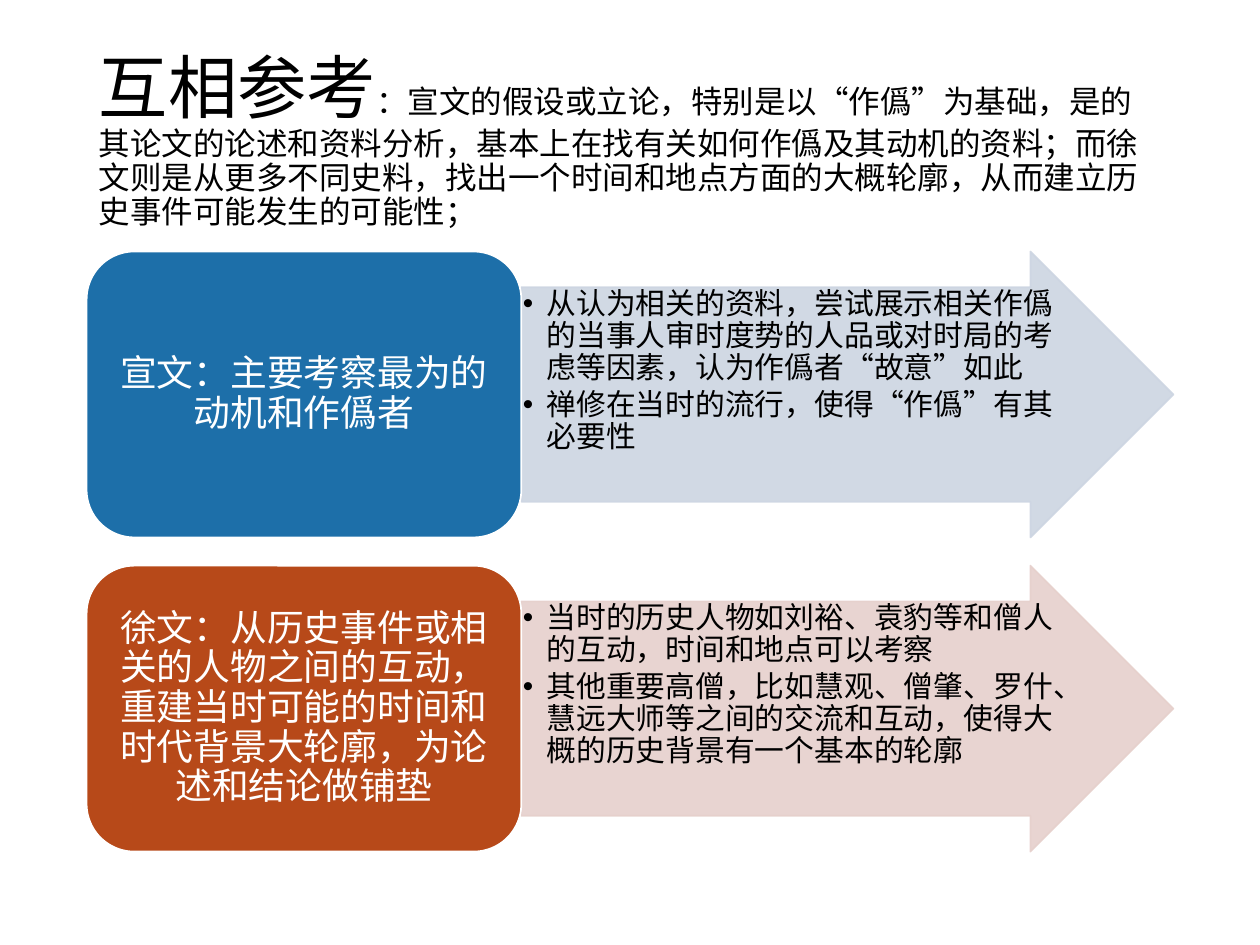
from lxml.etree import SubElement
from pptx import Presentation
from pptx.dml.color import RGBColor
from pptx.enum.lang import MSO_LANGUAGE_ID
from pptx.enum.shapes import MSO_SHAPE
from pptx.enum.text import MSO_ANCHOR, PP_ALIGN
from pptx.oxml.ns import qn
from pptx.util import Pt

HEADING = [
    ("互相参考", 39.6),
    ("：宣文的假设或立论，特别是以“作僞”为基础，是的其论文的论述和资料分析，"
     "基本上在找有关如何作僞及其动机的资料；而徐文则是从更多不同史料，"
     "找出一个时间和地点方面的大概轮廓，从而建立历史事件可能发生的可能性；", 18),
]
VIEWS = [
    {
        "thesis": "宣文：主要考察最为的动机和作僞者",
        "points": [
            "从认为相关的资料，尝试展示相关作僞的当事人审时度势的人品或对时局的考虑等因素，认为作僞者“故意”如此",
            "禅修在当时的流行，使得“作僞”有其必要性",
        ],
        "colours": ("blue", "pale blue"),
    },
    {
        "thesis": "徐文：从历史事件或相关的人物之间的互动，重建当时可能的时间和时代背景大轮廓，为论述和结论做铺垫",
        "points": [
            "当时的历史人物如刘裕、袁豹等和僧人的互动，时间和地点可以考察",
            "其他重要高僧，比如慧观、僧肇、罗什、慧远大师等之间的交流和互动，使得大概的历史背景有一个基本的轮廓",
        ],
        "colours": ("rust", "pale rust"),
    },
]
COLOURS = {
    "black": "000000", "white": "FFFFFF",
    "blue": "1D6FA9", "pale blue": "CDD5E2",
    "rust": "B74919", "pale rust": "E6D0CC",
}
FONT = "Times New Roman"
LEFT, WIDTH = 49.5, 621
HEADING_TOP, HEADING_HEIGHT = 28.75, 104.4
ROW_TOP, ROW_HEIGHT, ROW_PITCH = 143.75, 163.4, 179.5
THESIS_WIDTH = WIDTH * 0.4
HANGING = 13.5
ARROW_OPACITY = 90


def colour(name):
    return RGBColor.from_string(COLOURS[name])


def set_all(target, values):
    for attribute, value in values.items():
        setattr(target, attribute, value)


def set_frame(frame, anchor, side, edge):
    set_all(frame, {
        "word_wrap": True, "vertical_anchor": anchor,
        "margin_left": Pt(side), "margin_right": Pt(side),
        "margin_top": Pt(edge), "margin_bottom": Pt(edge),
    })


def write(paragraph, runs, ink, align, space_after=0):
    set_all(paragraph, {
        "alignment": align, "line_spacing": 0.9, "space_after": Pt(space_after),
    })
    for text, size in runs:
        run = paragraph.add_run()
        run.text = text
        set_all(run.font, {
            "name": FONT, "size": Pt(size),
            "language_id": MSO_LANGUAGE_ID.SIMPLIFIED_CHINESE,
        })
        run.font.color.rgb = colour(ink)


def add_panel(slide, preset, box, fill, line):
    panel = slide.shapes.add_shape(preset, *map(Pt, box))
    panel.shadow.inherit = False
    panel.fill.solid()
    panel.fill.fore_color.rgb = colour(fill)
    panel.line.color.rgb = colour(line)
    panel.line.width = Pt(1)
    return panel


def add_bullet(paragraph):
    properties = paragraph._p.get_or_add_pPr()
    properties.set("marL", str(Pt(HANGING)))
    properties.set("indent", str(-Pt(HANGING)))
    SubElement(properties, qn("a:buFont")).set("typeface", "Arial")
    SubElement(properties, qn("a:buChar")).set("char", "•")


def add_points(slide, points, top, tint):
    box = (LEFT + THESIS_WIDTH, top, WIDTH - THESIS_WIDTH, ROW_HEIGHT)
    arrow = add_panel(slide, MSO_SHAPE.RIGHT_ARROW, box, tint, tint)
    arrow.adjustments[0] = 0.75
    arrow.adjustments[1] = 0.5
    for paint in arrow._element.spPr.iter(qn("a:srgbClr")):
        SubElement(paint, qn("a:alpha")).set("val", str(ARROW_OPACITY * 1000))
    frame = arrow.text_frame
    set_frame(frame, MSO_ANCHOR.TOP, 0.85, 0.85)
    for index, point in enumerate(points):
        paragraph = frame.add_paragraph() if index else frame.paragraphs[0]
        write(paragraph, [(point, 17)], "black", PP_ALIGN.LEFT, 2.55)
        add_bullet(paragraph)


def add_thesis(slide, thesis, top, fill):
    box = (LEFT, top, THESIS_WIDTH, ROW_HEIGHT)
    panel = add_panel(slide, MSO_SHAPE.ROUNDED_RECTANGLE, box, fill, "white")
    set_frame(panel.text_frame, MSO_ANCHOR.MIDDLE, 6.3, 3.15)
    write(panel.text_frame.paragraphs[0], [(thesis, 21)], "white", PP_ALIGN.CENTER)


def main():
    deck = Presentation()
    set_all(deck, {"slide_width": Pt(720), "slide_height": Pt(540)})
    slide = deck.slides.add_slide(deck.slide_layouts[6])

    heading = slide.shapes.add_textbox(
        *map(Pt, (LEFT, HEADING_TOP, WIDTH, HEADING_HEIGHT))).text_frame
    set_frame(heading, MSO_ANCHOR.MIDDLE, 7.2, 3.6)
    write(heading.paragraphs[0], HEADING, "black", PP_ALIGN.LEFT)

    for row, view in enumerate(VIEWS):
        top = ROW_TOP + row * ROW_PITCH
        strong, tint = view["colours"]
        add_points(slide, view["points"], top, tint)
        add_thesis(slide, view["thesis"], top, strong)

    deck.save("out.pptx")


if __name__ == "__main__":
    main()
